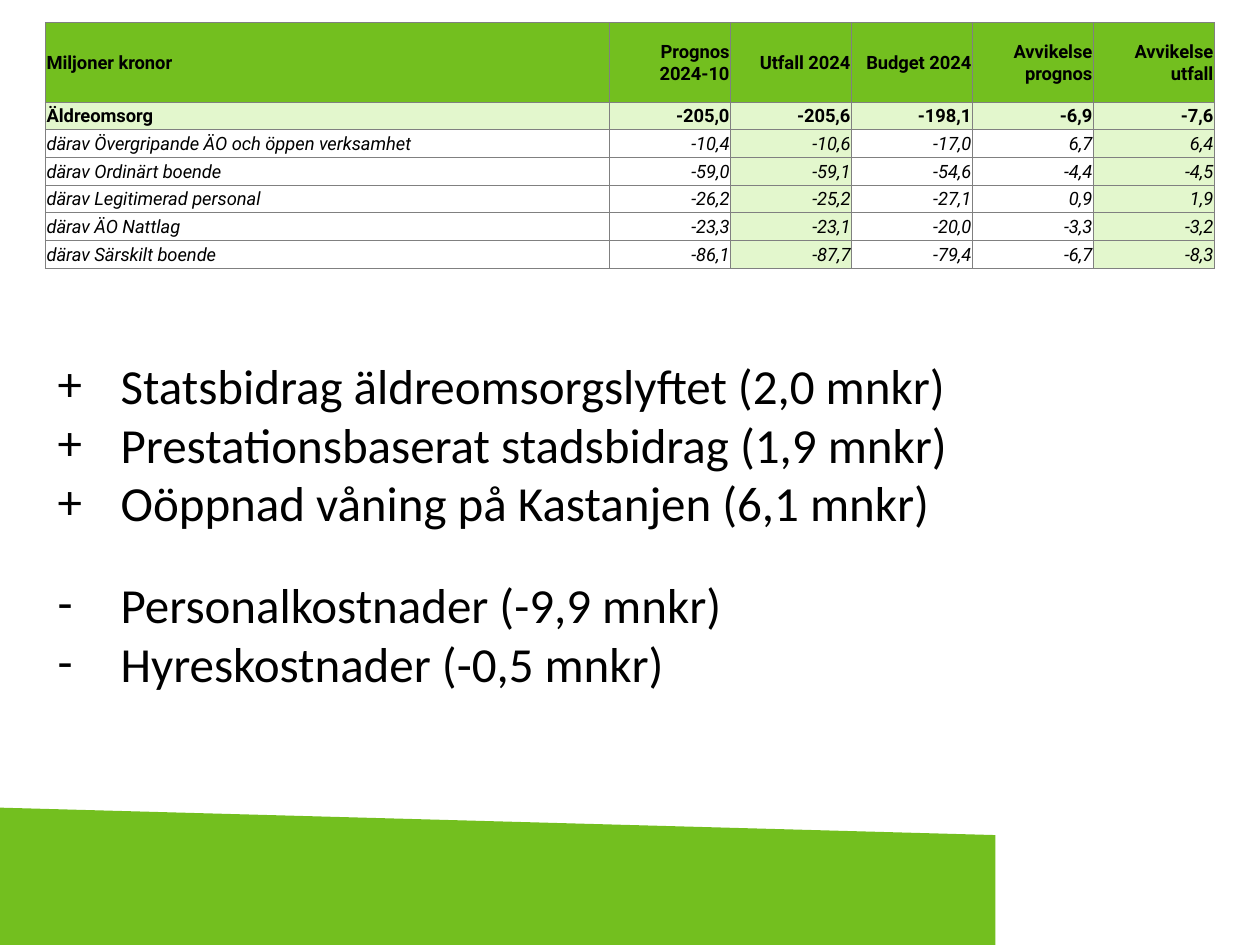
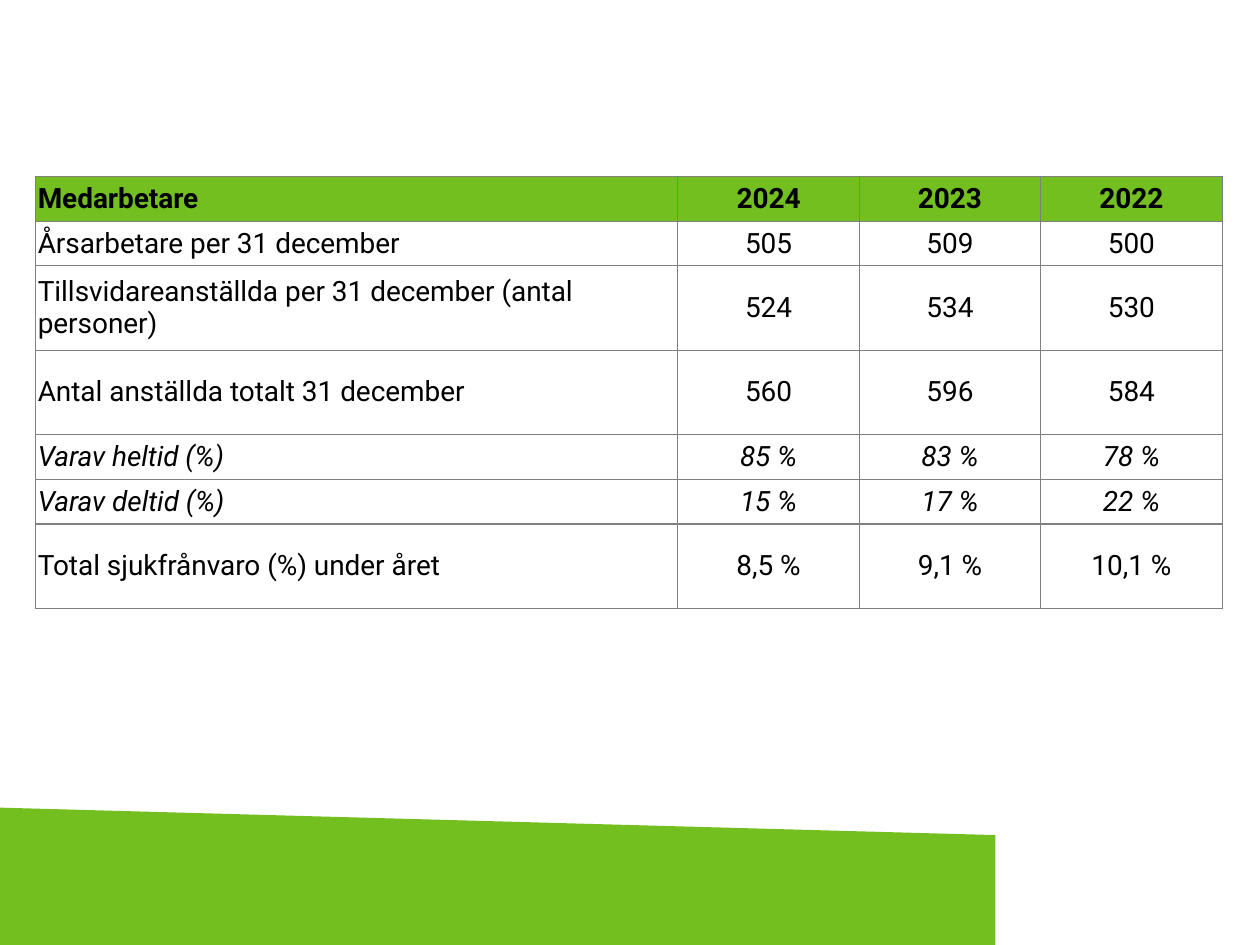
import pptx
import pptx.dml.color
import pptx.enum.shapes
import pptx.enum.text
import pptx.oxml.ns
import pptx.util
from lxml import etree

Inches = pptx.util.Inches
Pt = pptx.util.Pt
RGBColor = pptx.dml.color.RGBColor
ALIGN = pptx.enum.text.PP_ALIGN
MIDDLE = pptx.enum.text.MSO_ANCHOR.MIDDLE
qn = pptx.oxml.ns.qn

# Content
BUDGET = [
    ("Miljoner kronor", "Prognos 2024-10", "Utfall 2024", "Budget 2024",
     "Avvikelse prognos", "Avvikelse utfall"),
    ("Äldreomsorg", "-205,0", "-205,6", "-198,1", "-6,9", "-7,6"),
    ("därav Övergripande ÄO och öppen verksamhet",
     "-10,4", "-10,6", "-17,0", "6,7", "6,4"),
    ("därav Ordinärt boende", "-59,0", "-59,1", "-54,6", "-4,4", "-4,5"),
    ("därav Legitimerad personal", "-26,2", "-25,2", "-27,1", "0,9", "1,9"),
    ("därav ÄO Nattlag", "-23,3", "-23,1", "-20,0", "-3,3", "-3,2"),
    ("därav Särskilt boende", "-86,1", "-87,7", "-79,4", "-6,7", "-8,3"),
]
INCOME = [
    "Statsbidrag äldreomsorgslyftet (2,0 mnkr)",
    "Prestationsbaserat stadsbidrag (1,9 mnkr)",
    "Oöppnad våning på Kastanjen (6,1 mnkr)",
]
COSTS = ["Personalkostnader (-9,9 mnkr)", "Hyreskostnader (-0,5 mnkr)"]
STAFF = [
    ("Medarbetare", "2024", "2023", "2022"),
    ("Årsarbetare per 31 december", "505", "509", "500"),
    ("Tillsvidareanställda per 31 december (antal personer)",
     "524", "534", "530"),
    ("Antal anställda totalt 31 december", "560", "596", "584"),
    ("Varav heltid (%)", "85 %", "83 %", "78 %"),
    ("Varav deltid (%)", "15 %", "17 %", "22 %"),
    ("Total sjukfrånvaro (%) under året", "8,5 %", "9,1 %", "10,1 %"),
]

# Shared style
GREEN = RGBColor(0x73, 0xBF, 0x1F)
PALE_GREEN = RGBColor(0xE3, 0xF7, 0xCD)
WHITE = RGBColor(0xFF, 0xFF, 0xFF)
BLACK = RGBColor(0, 0, 0)
GREY = RGBColor(0x80, 0x80, 0x80)
TABLE_FONT, LIST_FONT = "Roboto", "Calibri"


def set_font(font, name, size, bold=False, italic=False):
    font.name, font.size = name, Pt(size)
    font.bold, font.italic = bold, italic
    font.color.rgb = BLACK


def add_banded_slide(deck):
    """Add a blank slide with the slanted green footer band."""
    slide = deck.slides.add_slide(deck.slide_layouts[6])
    band = slide.shapes.add_shape(
        pptx.enum.shapes.MSO_SHAPE.FLOWCHART_MANUAL_INPUT,
        0, Inches(6.41), Inches(7.9), Inches(1.09))
    band.shadow.inherit = False
    band.fill.solid()
    band.fill.fore_color.rgb = GREEN
    band.line.fill.background()
    band.element.spPr.find(qn("a:xfrm")).set("flipH", "1")
    return slide


def add_borders(cell, width):
    properties = cell._tc.get_or_add_tcPr()
    for side in ("a:lnL", "a:lnR", "a:lnT", "a:lnB"):
        line = etree.SubElement(properties, qn(side), w=str(Pt(width)))
        fill = etree.SubElement(line, qn("a:solidFill"))
        etree.SubElement(fill, qn("a:srgbClr"), val=str(GREY))


def add_grid(slide, rows, left, top, widths, heights, size, align,
             border, insets, fill_at, bold_rows, italic_rows):
    """Add a table; fill_at(row, column) gives a colour or None."""
    table = slide.shapes.add_table(
        len(rows), len(widths), Inches(left), Inches(top),
        Inches(sum(widths)), Inches(sum(heights))).table
    table.horz_banding = table.first_row = False
    for column, width in zip(table.columns, widths):
        column.width = Inches(width)
    for r, (texts, height) in enumerate(zip(rows, heights)):
        table.rows[r].height = Inches(height)
        for c, text in enumerate(texts):
            cell = table.cell(r, c)
            cell.vertical_anchor = MIDDLE
            (cell.margin_left, cell.margin_top, cell.margin_right,
             cell.margin_bottom) = map(Inches, insets)
            add_borders(cell, border)
            color = fill_at(r, c)
            if color is None:
                cell.fill.background()
            else:
                cell.fill.solid()
                cell.fill.fore_color.rgb = color
            paragraph = cell.text_frame.paragraphs[0]
            paragraph.text = text
            paragraph.alignment = align if c else ALIGN.LEFT
            set_font(paragraph.runs[0].font, TABLE_FONT, size,
                     r in bold_rows, r in italic_rows)


def add_bullets(slide, items, mark, top, width, height):
    box = slide.shapes.add_textbox(
        Inches(0.36), Inches(top), Inches(width), Inches(height))
    frame = box.text_frame
    frame.word_wrap = True
    frame.text = "\n".join(items)
    for paragraph in frame.paragraphs:
        properties = paragraph._p.get_or_add_pPr()
        properties.set("marL", str(Inches(0.5)))
        properties.set("indent", str(Inches(-0.5)))
        etree.SubElement(properties, qn("a:buFont"), typeface=LIST_FONT)
        etree.SubElement(properties, qn("a:buChar"), char=mark)
        set_font(paragraph.runs[0].font, LIST_FONT, 28)


def budget_fill(row, column):
    if row == 0:
        return GREEN
    return PALE_GREEN if row == 1 or column in (2, 5) else None


def staff_fill(row, column):
    return WHITE if row else GREEN


def main():
    deck = pptx.Presentation()
    deck.slide_width, deck.slide_height = Inches(10), Inches(7.5)

    # Budget outcome and what explains it
    budget = add_banded_slide(deck)
    add_grid(budget, BUDGET, 0.36, 0.18, [4.48] + [0.96] * 5,
             [0.63] + [0.22] * 6, 10.5, ALIGN.RIGHT, 0.5,
             (0.01, 0.01, 0.01, 0), budget_fill, (0, 1), range(2, 7))
    add_bullets(budget, INCOME, "+", 2.77, 9.27, 1.51)
    add_bullets(budget, COSTS, "-", 4.51, 9.64, 1.04)

    # Staff figures
    staff = add_banded_slide(deck)
    low, tall = 0.355, 0.67
    add_grid(staff, STAFF, 0.28, 1.4, [5.1] + [1.44] * 3,
             [low, low, tall, tall, low, low, tall], 16, ALIGN.CENTER, 0.75,
             (0.02,) * 4, staff_fill, (0,), (4, 5))

    deck.save("out.pptx")


if __name__ == "__main__":
    main()
